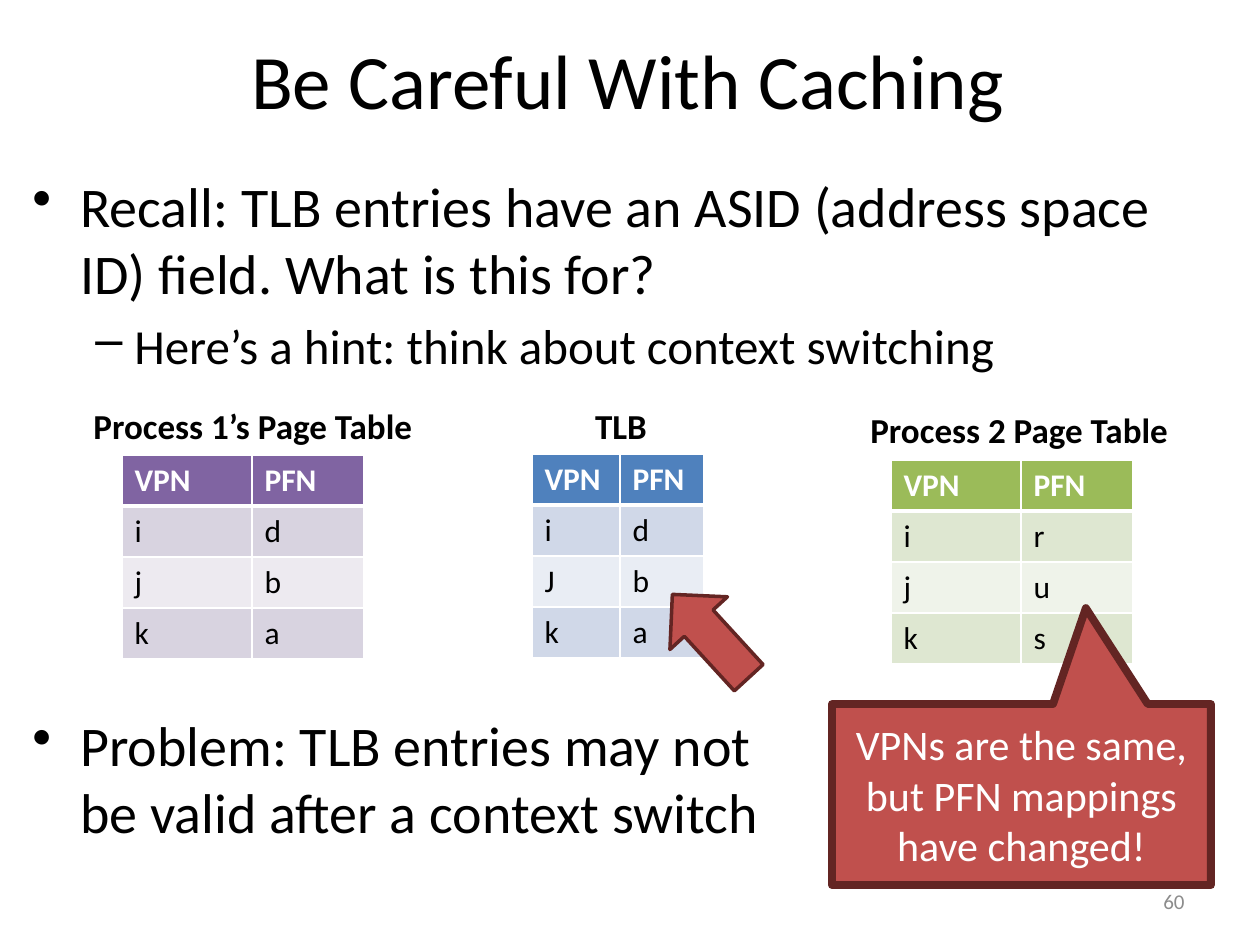
import pptx
import pptx.util
import pptx.dml.color
import pptx.enum.shapes
import pptx.enum.text
import pptx.oxml
import pptx.oxml.ns

SCALE = 914400 / 126  # EMU per px
FONT = "Calibri"
COLORS = {
    "text": "000000", "white": "FFFFFF", "number": "8C8C8C",
    "red": "C0504D", "dark_red": "632523",
}
# Header, odd row and even row fills of each table
PURPLE = ("8064A2", "D8D3E0", "EDEAF0")
GREEN = ("9BBB59", "DEE7D1", "EFF3EA")
BLUE = ("4F81BD", "D0D8E8", "E9EDF4")
HEADER = ("VPN", "PFN")
ALIGN = pptx.enum.text.PP_ALIGN
ANCHOR = pptx.enum.text.MSO_ANCHOR
SHAPE = pptx.enum.shapes.MSO_SHAPE


def px(n):
    return pptx.util.Emu(round(n * SCALE))


def rgb(value):
    return pptx.dml.color.RGBColor.from_string(value)


def write(p, text, size=18, color="text", bold=False, align=ALIGN.LEFT):
    p.alignment = align
    r = p.add_run()
    r.text = text
    r.font.name = FONT
    r.font.size = pptx.util.Pt(size)
    r.font.bold = bold
    r.font.color.rgb = rgb(COLORS[color])


class Slide:
    def __init__(self, prs):
        self.s = prs.slides.add_slide(prs.slide_layouts[6])

    def text(self, box, text, anchor=ANCHOR.TOP, wrap=True, **fmt):
        tf = self.s.shapes.add_textbox(*map(px, box)).text_frame
        tf.word_wrap = wrap
        tf.vertical_anchor = anchor
        if not wrap:
            tf.auto_size = pptx.enum.text.MSO_AUTO_SIZE.SHAPE_TO_FIT_TEXT
        write(tf.paragraphs[0], text, **fmt)

    def bullets(self, box, items):
        """Each item is (level, text)."""
        styles = (("•", 48, -48, 32), ("–", 102, -39, 28))
        tf = self.s.shapes.add_textbox(*map(px, box)).text_frame
        tf.word_wrap = True
        for i, (level, text) in enumerate(items):
            char, margin, indent, size = styles[level]
            p = tf.add_paragraph() if i else tf.paragraphs[0]
            p.level = level
            p.space_before = pptx.util.Pt(size * 0.2)
            write(p, text, size=size)
            pPr = p._p.get_or_add_pPr()
            pPr.set("marL", str(px(margin)))
            pPr.set("indent", str(px(indent)))
            bullet = pptx.oxml.ns.qn("a:buChar")
            pPr.append(pPr.makeelement(bullet, {"char": char}))

    def table(self, left, top, widths, fills, rows):
        rows = [HEADER, *rows]
        row_height = 51
        frame = self.s.shapes.add_table(
            len(rows), len(widths), px(left), px(top),
            px(sum(widths)), px(row_height * len(rows)))
        table = frame.table
        for column, width in zip(table.columns, widths):
            column.width = px(width)
        for i, row in enumerate(rows):
            table.rows[i].height = px(row_height)
            fill = fills[0] if i == 0 else fills[2 - i % 2]
            for j, text in enumerate(row):
                cell = table.cell(i, j)
                cell.fill.solid()
                cell.fill.fore_color.rgb = rgb(fill)
                write(cell.text_frame.paragraphs[0], text, bold=i == 0,
                      color="text" if i else "white")
                self.borders(cell, top=3 if i == 1 else 1,
                             bottom=3 if i == 0 else 1)

    def borders(self, cell, top, bottom):
        tcPr = cell._tc.get_or_add_tcPr()
        sides = (("L", 1), ("R", 1), ("T", top), ("B", bottom))
        for k, (side, points) in enumerate(sides):
            tcPr.insert(k, pptx.oxml.parse_xml(
                f'<a:ln{side} {pptx.oxml.ns.nsdecls("a")} '
                f'w="{pptx.util.Pt(points)}"><a:solidFill>'
                f'<a:srgbClr val="{COLORS["white"]}"/>'
                f'</a:solidFill></a:ln{side}>'))

    def shape(self, kind, box, line, rotation=0, adjust=(), text="", size=24):
        sp = self.s.shapes.add_shape(kind, *map(px, box))
        sp.shadow.inherit = False
        sp.rotation = rotation
        for i, value in enumerate(adjust):
            sp.adjustments[i] = value
        sp.fill.solid()
        sp.fill.fore_color.rgb = rgb(COLORS["red"])
        sp.line.color.rgb = rgb(COLORS["dark_red"])
        sp.line.width = pptx.util.Pt(line)
        if text:
            tf = sp.text_frame
            tf.word_wrap = True
            tf.vertical_anchor = ANCHOR.MIDDLE
            write(tf.paragraphs[0], text, size=size, color="white",
                  align=ALIGN.CENTER)


def main():
    prs = pptx.Presentation()
    prs.slide_width, prs.slide_height = px(1260), px(945)
    slide = Slide(prs)

    # Title, opening points and slide number
    slide.text((6, 0, 1244, 158), "Be Careful With Caching", size=44,
               anchor=ANCHOR.MIDDLE, align=ALIGN.CENTER)
    slide.bullets((20, 165, 1213, 231), [
        (0, "Recall: TLB entries have an ASID (address space ID) field. "
            "What is this for?"),
        (1, "Here’s a hint: think about context switching"),
    ])
    slide.text((903, 876, 294, 50), "60", size=12, color="number",
               anchor=ANCHOR.MIDDLE, align=ALIGN.RIGHT)

    # Page tables and TLB with their captions
    page_columns, tlb_columns = (130, 112), (88, 84)
    slide.table(122, 455, page_columns, PURPLE, ["id", "jb", "ka"])
    slide.table(891, 460, page_columns, GREEN, ["ir", "ju", "ks"])
    slide.table(532, 454, tlb_columns, BLUE, ["id", "Jb", "ka"])
    for box, caption, align in (
        ((81, 398, 346, 55), "Process 1’s Page Table", ALIGN.LEFT),
        ((858, 402, 325, 55), "Process 2 Page Table", ALIGN.LEFT),
        ((582, 398, 78, 55), "TLB", ALIGN.CENTER),
    ):
        slide.text(box, caption, size=20, bold=True, wrap=False, align=align)

    # Arrow to the stale entry and callout on the changed mappings
    slide.shape(SHAPE.RIGHT_ARROW, (654, 597, 113, 78), line=2, rotation=227.5)
    slide.shape(SHAPE.RECTANGULAR_CALLOUT, (832, 704, 379, 181), line=4.5,
                adjust=(0.17, -1.03),
                text="VPNs are the same, but PFN mappings have changed!")

    # Conclusion
    slide.bullets((20, 704, 774, 205), [
        (0, "Problem: TLB entries may not be valid after a context switch"),
    ])
    prs.save("out.pptx")


if __name__ == "__main__":
    main()
